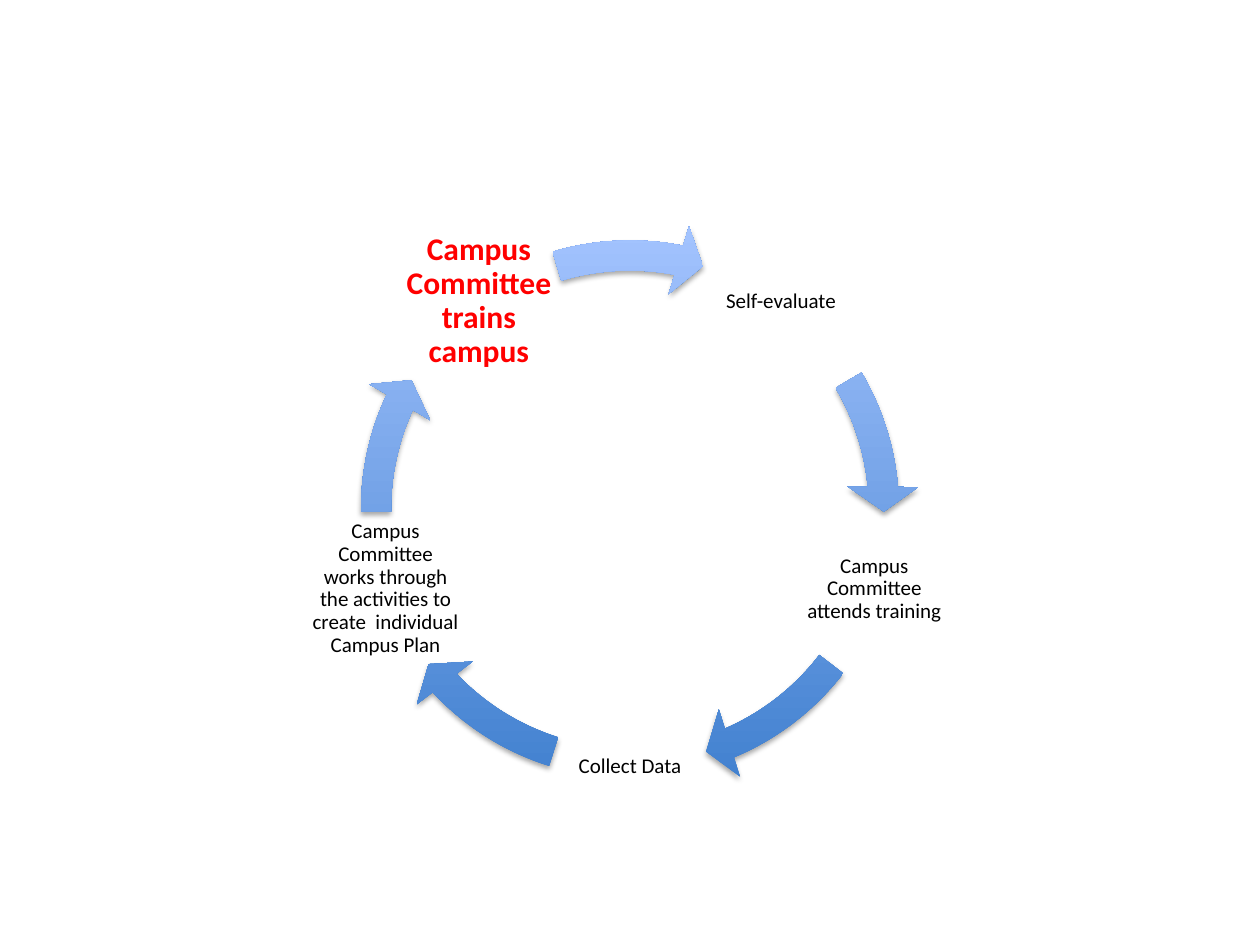
from math import cos, radians, sin

from lxml.etree import SubElement
from pptx import Presentation
from pptx.dml.color import RGBColor
from pptx.enum.shapes import MSO_SHAPE as Preset
from pptx.enum.text import MSO_ANCHOR as Anchor, PP_ALIGN as Align
from pptx.oxml.ns import qn
from pptx.util import Cm, Pt

CENTER_X, CENTER_Y, RADIUS = 12.7, 10.27, 5.18
STEP_SIZE, RING_SIZE = 3.1, 11.66
DEGREE = 0.6
PLAIN = {"size": Pt(12), "bold": False, "color": "000000", "inset": 0.04}
CURRENT = {"size": Pt(18), "bold": True, "color": "FF0000", "inset": 0.06}
STEPS = [
    ("Self-evaluate", PLAIN, 329.43, 354.9),
    ("Campus Committee attends training", PLAIN, 37.55, 66.93),
    ("Collect Data", PLAIN, 107.48, 136.86),
    ("Campus Committee works through the activities to create  individual "
     "Campus Plan", PLAIN, 179.5, 204.98),
    ("Campus Committee trains campus", CURRENT, 253.3, 281.11),
]


def rgb(value):
    return RGBColor.from_string(value)


def apply_format(target, values):
    for name, value in values.items():
        setattr(target, name, value)


def square(x, y, size):
    return Cm(x - size / 2), Cm(y - size / 2), Cm(size), Cm(size)


def add_step(cycle, wording, style, angle):
    x = CENTER_X + RADIUS * cos(radians(angle))
    y = CENTER_Y + RADIUS * sin(radians(angle))
    frame = cycle.shapes.add_textbox(*square(x, y, STEP_SIZE)).text_frame
    inset = Cm(style["inset"])
    apply_format(frame, {
        "word_wrap": True, "vertical_anchor": Anchor.MIDDLE,
        "margin_left": inset, "margin_right": inset,
        "margin_top": inset, "margin_bottom": inset,
    })
    label = frame.paragraphs[0]
    apply_format(label, {"alignment": Align.CENTER, "line_spacing": 0.9})
    run = label.add_run()
    run.text = wording
    apply_format(run.font, {
        "name": "Calibri", "size": style["size"], "bold": style["bold"],
    })
    run.font.color.rgb = rgb(style["color"])


def add_soft_shadow(arrow):
    arrow.shadow.inherit = False
    effects = arrow._element.spPr.find(qn("a:effectLst"))
    shadow = SubElement(effects, qn("a:outerShdw"), {
        "blurRad": str(Pt(3.1)), "dist": str(Pt(1.8)),
        "dir": "5400000", "rotWithShape": "0",
    })
    black = SubElement(shadow, qn("a:srgbClr"), val="000000")
    SubElement(black, qn("a:alpha"), val="35000")


def add_arrow(cycle, start, end):
    arrow = cycle.shapes.add_shape(
        Preset.CIRCULAR_ARROW, *square(CENTER_X, CENTER_Y, RING_SIZE))
    adjustments = (0.052, 5.6 * DEGREE, end * DEGREE, start * DEGREE, 0.061)
    for index, value in enumerate(adjustments):
        arrow.adjustments[index] = value
    arrow.fill.gradient()
    arrow.fill.gradient_angle = 90
    for stop, color in zip(arrow.fill.gradient_stops, ("3F7FCE", "A4C4FF")):
        stop.color.rgb = rgb(color)
    arrow.line.fill.background()
    add_soft_shadow(arrow)


def main():
    deck = Presentation()
    apply_format(deck, {"slide_width": Cm(25.4), "slide_height": Cm(19.05)})
    slide = deck.slides.add_slide(deck.slide_layouts[6])
    cycle = slide.shapes.add_group_shape()
    for index, (wording, style, start, end) in enumerate(STEPS):
        add_step(cycle, wording, style, -54 + index * 360 / len(STEPS))
        add_arrow(cycle, start, end)
    deck.save("out.pptx")


if __name__ == "__main__":
    main()
